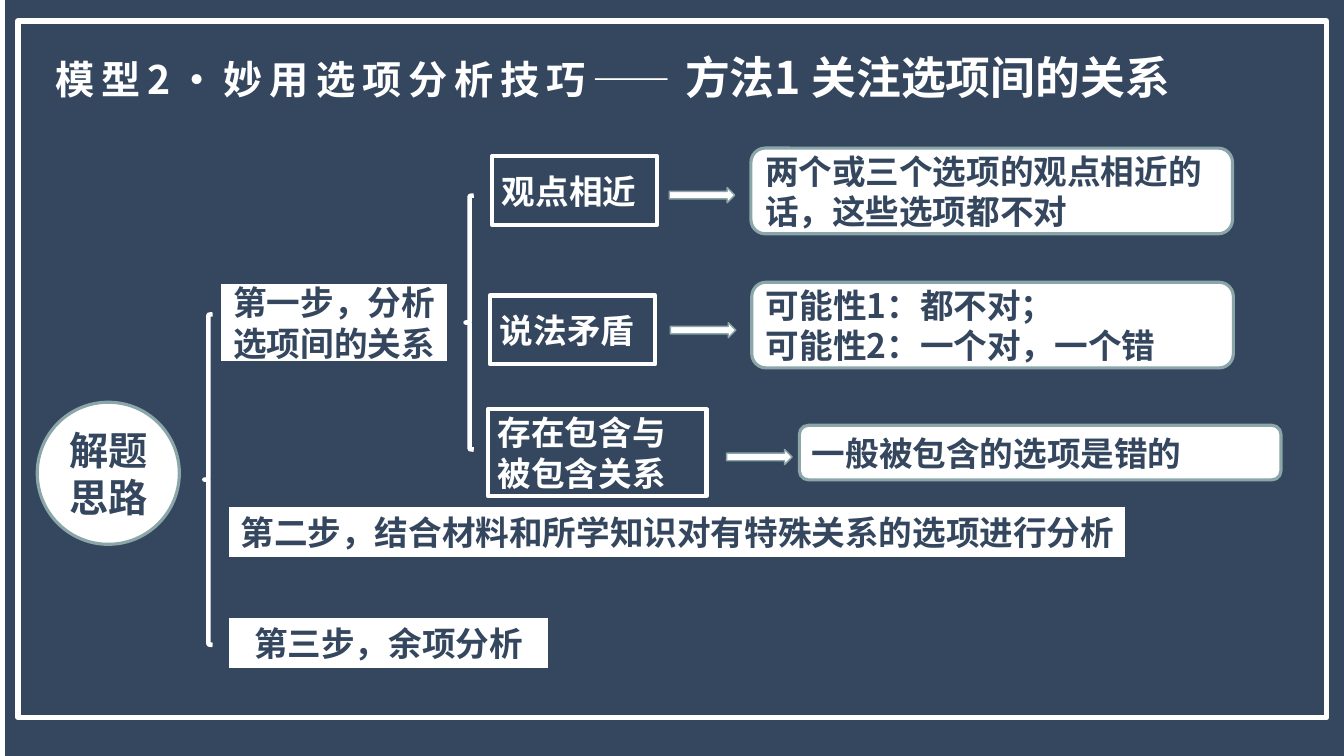
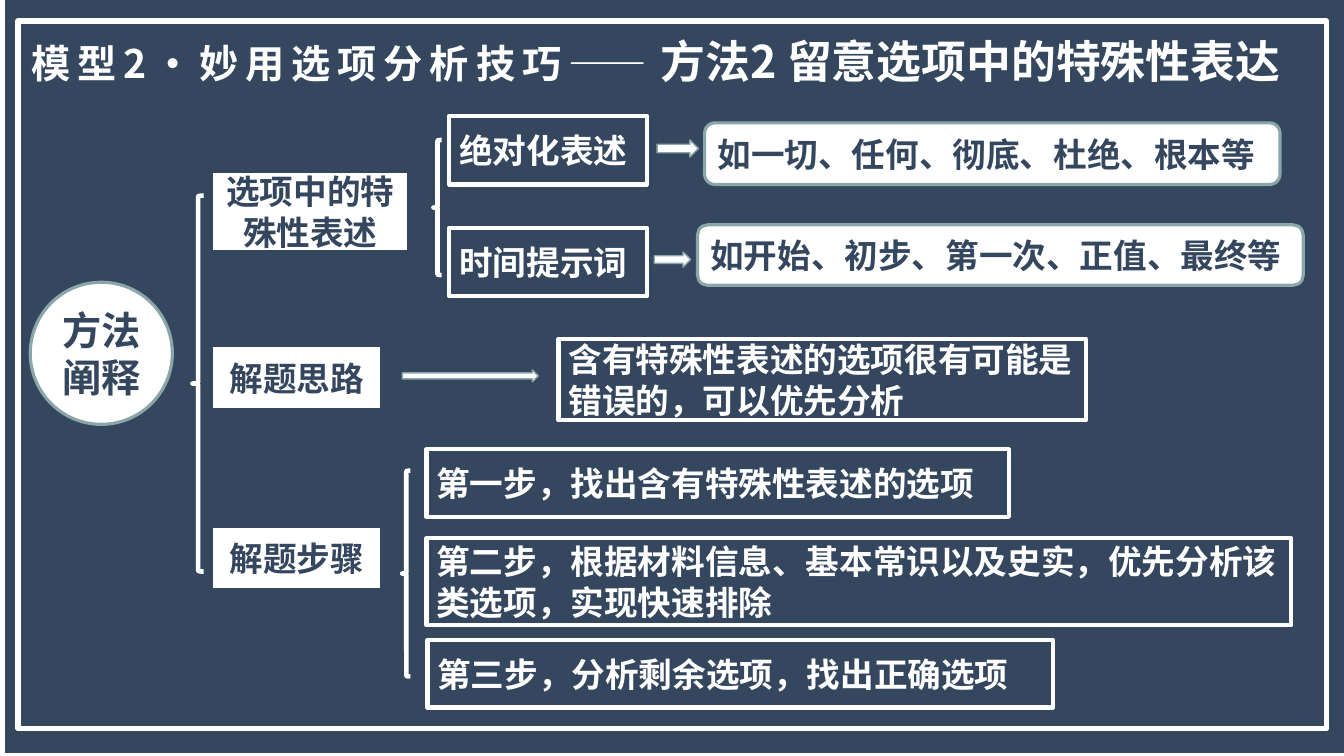
import lxml.etree
import pptx
import pptx.dml.color
import pptx.enum.shapes
import pptx.enum.text
import pptx.oxml.ns
import pptx.util

Pt = pptx.util.Pt
Shape = pptx.enum.shapes.MSO_SHAPE
Align = pptx.enum.text.PP_ALIGN
Anchor = pptx.enum.text.MSO_ANCHOR


def color(hex_string):
    return pptx.dml.color.RGBColor.from_string(hex_string)


class Deck:
    """Holds the shared style and the slide being built; lengths are in points."""

    FONT = "Noto Sans CJK SC"
    NAVY = "35475F"
    WHITE = "FFFFFF"
    SAGE = "8AA6A8"
    WIDTH, HEIGHT = 960, 540
    TITLE_LEAD = "模型2·妙用选项分析技巧——"

    def __init__(self):
        self.presentation = pptx.Presentation()
        self.presentation.slide_width = Pt(self.WIDTH)
        self.presentation.slide_height = Pt(self.HEIGHT)
        self.slide = None

    def start_slide(self, panel_top, frame_height):
        layout = self.presentation.slide_layouts.get_by_name("Title Only")
        self.slide = self.presentation.slides.add_slide(layout)
        self.shape(Shape.RECTANGLE, (3.6, panel_top, self.WIDTH, self.HEIGHT), fill=self.NAVY)
        self.shape(Shape.RECTANGLE, (13, 15, 934.5, frame_height), line=self.WHITE, weight=4)

    def style(self, paragraph, text_color, size=None, align=Align.LEFT):
        paragraph.alignment = align
        font = paragraph.font
        font.name = self.FONT
        font.bold = True
        font.color.rgb = color(text_color)
        if size:
            font.size = Pt(size)
        properties = paragraph._p.pPr.find(pptx.oxml.ns.qn("a:defRPr"))
        east_asian = lxml.etree.SubElement(properties, pptx.oxml.ns.qn("a:ea"))
        east_asian.set("typeface", self.FONT)

    def title(self, place, topic):
        title = self.slide.shapes.title
        # The placeholder must lie in front of the panel.
        self.slide.shapes._spTree.append(title._element)
        title.left, title.top, title.width, title.height = map(Pt, place)
        frame = title.text_frame
        frame.word_wrap = True
        frame.auto_size = pptx.enum.text.MSO_AUTO_SIZE.SHAPE_TO_FIT_TEXT
        frame.vertical_anchor = Anchor.TOP
        paragraph = frame.paragraphs[0]
        for text, size, spacing in ((self.TITLE_LEAD, 28, 500), (topic, 32, 0)):
            run = paragraph.add_run()
            run.text = text
            run.font.size = Pt(size)
            run.font._element.set("spc", str(spacing))
        self.style(paragraph, self.WHITE)

    def shape(self, kind, place, fill=None, line=None, weight=1):
        shape = self.slide.shapes.add_shape(kind, *map(Pt, place))
        shape.shadow.inherit = False
        if fill:
            shape.fill.solid()
            shape.fill.fore_color.rgb = color(fill)
        else:
            shape.fill.background()
        if line:
            shape.line.color.rgb = color(line)
            shape.line.width = Pt(weight)
        else:
            shape.line.fill.background()
        return shape

    def label(self, shape, text, text_color, size=24, align=Align.LEFT):
        frame = shape.text_frame
        frame.word_wrap = True
        frame.vertical_anchor = Anchor.MIDDLE
        frame.text = text
        for paragraph in frame.paragraphs:
            self.style(paragraph, text_color, size, align)

    def topic_circle(self, left, top, text):
        circle = self.shape(Shape.OVAL, (left, top, 101.5, 101.5), self.WHITE, self.SAGE, 2.25)
        self.label(circle, text, self.NAVY, 28, Align.CENTER)

    def step(self, place, text):
        """White block with centred navy text."""
        block = self.shape(Shape.RECTANGLE, place, self.WHITE, self.NAVY, 2.25)
        self.label(block, text, self.NAVY, align=Align.CENTER)

    def outlined_box(self, place, text):
        box = self.shape(Shape.RECTANGLE, place, line=self.WHITE, weight=3)
        self.label(box, text, self.WHITE)

    def card(self, place, text):
        """Rounded white block with navy text."""
        card = self.shape(Shape.ROUNDED_RECTANGLE, place, self.WHITE, self.SAGE, 2.25)
        self.label(card, text, self.NAVY)

    def brace(self, left, top, height, width=5.8):
        self.shape(Shape.LEFT_BRACE, (left, top, width, height), line=self.WHITE, weight=3.25)

    def arrow(self, left, top, width=46.8, height=10.8):
        self.shape(Shape.RIGHT_ARROW, (left, top, width, height), self.WHITE, self.SAGE)


def build_relations(deck):
    deck.start_slide(panel_top=0, frame_height=497.5)
    deck.title((32.4, 31.7, 862, 80), "方法1 关注选项间的关系")
    deck.topic_circle(26.6, 287.3, "解题思路")
    deck.brace(146, 224.6, 236)
    deck.step((157, 201.6, 163.4, 57.6), "第一步，分析选项间的关系")
    deck.brace(332.6, 139.7, 181.4)
    relations = (
        ((351.4, 111.6, 118, 49), "观点相近", (478, 134),
         (536.4, 105.8, 344, 61.2), "两个或三个选项的观点相近的话，这些选项都不对"),
        ((350, 211, 118, 49), "说法矛盾", (478.8, 230.4),
         (537, 201.6, 344, 61.2), "可能性1：都不对；\n可能性2：一个对，一个错"),
        ((348.5, 292.3, 156.2, 62), "存在包含与被包含关系", (519, 321),
         (571, 303.8, 344, 39), "一般被包含的选项是错的"),
    )
    for box_place, relation, arrow_corner, card_place, verdict in relations:
        deck.outlined_box(box_place, relation)
        deck.arrow(*arrow_corner)
        deck.card(card_place, verdict)
    deck.step((162.7, 360.7, 642.2, 38.2), "第二步，结合材料和所学知识对有特殊关系的选项进行分析")
    deck.step((162.7, 440, 229.7, 38.2), "第三步，余项分析")


def build_special_wording(deck):
    deck.start_slide(panel_top=-2.2, frame_height=505.5)
    deck.title((15, 20.2, 911, 46), "方法2 留意选项中的特殊性表达")
    deck.topic_circle(21.6, 201.6, "方法阐释")
    deck.brace(137.5, 139.7, 268.6, width=8)
    deck.step((151.2, 122.4, 141, 57.6), "选项中的特殊性表述")
    deck.brace(309.6, 100, 96.5)
    wordings = (
        ((321, 82.8, 141, 49), "绝对化表述", (469.4, 100, 29.5, 12.2),
         (503.3, 87.8, 411, 44), "如一切、任何、彻底、杜绝、根本等"),
        ((321, 162.7, 141, 49), "时间提示词", (467.3, 180, 26, 10.8),
         (498.2, 160.6, 432.7, 43.2), "如开始、初步、第一次、正值、最终等"),
    )
    for box_place, wording, arrow_place, card_place, examples in wordings:
        deck.outlined_box(box_place, wording)
        deck.arrow(*arrow_place)
        deck.card(card_place, examples)
    for top, text in ((247, "解题思路"), (375.8, "解题步骤")):
        deck.step((151.2, top, 121.7, 45.4), text)
    deck.arrow(287.3, 264.2, 97.2, 8.6)
    deck.outlined_box((399, 242, 376.6, 58.3), "含有特殊性表述的选项很有可能是错误的，可以优先分析")
    deck.brace(287.3, 336.2, 147)
    for place, text in (
        ((304.6, 321, 416, 48.2), "第一步，找出含有特殊性表述的选项"),
        ((304.6, 384.5, 617.8, 62), "第二步，根据材料信息、基本常识以及史实，优先分析该类选项，实现快速排除"),
        ((305.3, 457.2, 447, 48.2), "第三步，分析剩余选项，找出正确选项"),
    ):
        deck.outlined_box(place, text)


def main():
    deck = Deck()
    build_relations(deck)
    build_special_wording(deck)
    deck.presentation.save("out.pptx")


if __name__ == "__main__":
    main()
